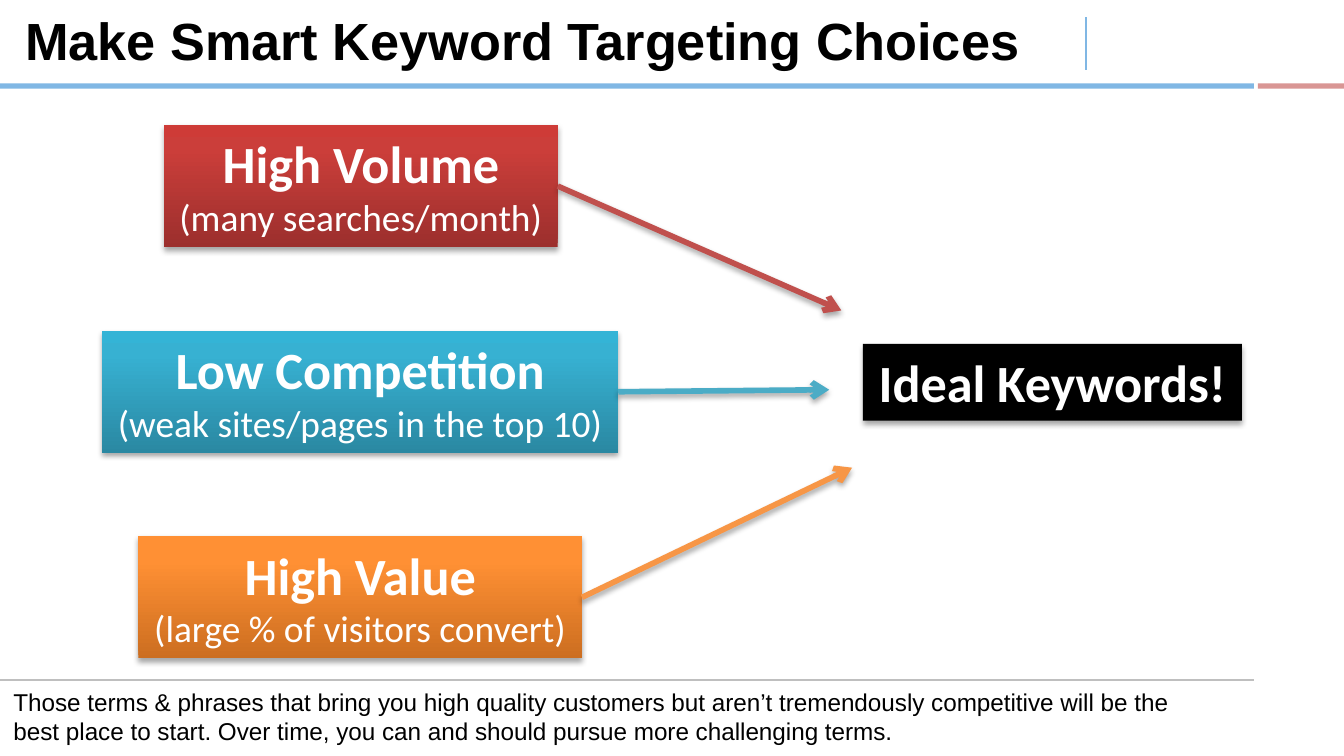
from pptx import Presentation
from pptx.dml.color import RGBColor
from pptx.enum.shapes import MSO_CONNECTOR, MSO_SHAPE
from pptx.enum.text import MSO_ANCHOR, MSO_AUTO_SIZE, PP_ALIGN
from pptx.oxml import parse_xml
from pptx.oxml.ns import nsdecls, qn
from pptx.util import Inches, Pt

COLORS = {
    "black": "000000", "white": "FFFFFF", "grey": "BFBFBF",
    "blue": "80B7E4", "pink": "D99694",
    "red": "C0504D", "teal": "4BACC6", "orange": "F79646",
}
# Gradient stops from bottom to top: (percent, colour)
GRADIENTS = {
    "red": [(0, "9C2F2D"), (80, "CB3E3A"), (100, "CE3B37")],
    "teal": [(0, "2A88A2"), (80, "37B1D2"), (100, "34B4D6")],
    "orange": [(0, "CC6E20"), (80, "FF9034"), (100, "FF9136")],
}
# Each factor: heading, detail, colour, left, width, arrow tip
FACTORS = [
    ("High Volume", "(many searches/month)", "red", 1.22, 2.93, (6.26, 2.31)),
    ("Low Competition", "(weak sites/pages in the top 10)", "teal", 0.76, 3.84, (6.17, 2.9)),
    ("High Value", "(large % of visitors convert)", "orange", 1.03, 3.3, (6.34, 3.48)),
]
FACTOR_TOP, FACTOR_STEP, FACTOR_HEIGHT = 0.93, 1.53, 0.91


def rgb(name):
    return RGBColor.from_string(COLORS[name])


def add_text(p, text, size=28, font="Calibri", color="white", bold=False,
             align=PP_ALIGN.CENTER):
    p.alignment = align
    p.space_before = Pt(0)
    r = p.add_run()
    r.text = text
    r.font.size, r.font.name, r.font.bold = Pt(size), font, bold
    r.font.color.rgb = rgb(color)


def place(sp, left, top, width, height):
    sp.left, sp.top = Inches(left), Inches(top)
    sp.width, sp.height = Inches(width), Inches(height)
    tf = sp.text_frame
    tf.word_wrap = True
    tf.auto_size = MSO_AUTO_SIZE.NONE
    tf.vertical_anchor = MSO_ANCHOR.MIDDLE
    return tf.paragraphs[0]


def add_shadow(sp):
    effects = sp._element.spPr.find(qn("a:effectLst"))
    effects.append(parse_xml(
        f'<a:outerShdw {nsdecls("a")} blurRad="{Pt(3.1)}" dist="{Pt(1.8)}" '
        'dir="5400000" rotWithShape="0"><a:srgbClr val="000000">'
        '<a:alpha val="35000"/></a:srgbClr></a:outerShdw>'))


def add_rect(s, left, top, width, height, color):
    sp = s.shapes.add_shape(MSO_SHAPE.RECTANGLE, Inches(left), Inches(top),
                            Inches(width), Inches(height))
    sp.shadow.inherit = False
    sp.line.fill.background()
    sp.fill.solid()
    sp.fill.fore_color.rgb = rgb(color)
    return sp


def set_gradient(sp, stops):
    sp.fill.gradient()
    sp.fill.gradient_angle = 90
    gs_list = sp._element.spPr.find(qn("a:gradFill")).find(qn("a:gsLst"))
    for gs in list(gs_list):
        gs_list.remove(gs)
    for percent, color in stops:
        gs_list.append(parse_xml(
            f'<a:gs {nsdecls("a")} pos="{percent * 1000}">'
            f'<a:srgbClr val="{color}"/></a:gs>'))


def add_box(s, left, top, width, height, color, heading, detail=None):
    sp = add_rect(s, left, top, width, height, color)
    add_shadow(sp)
    tf = sp.text_frame
    tf.word_wrap = False
    tf.auto_size = MSO_AUTO_SIZE.SHAPE_TO_FIT_TEXT
    tf.vertical_anchor = MSO_ANCHOR.TOP
    add_text(tf.paragraphs[0], heading, bold=True)
    if detail:
        add_text(tf.add_paragraph(), detail, size=20)
    return sp


def add_line(s, start, end, color, width=0.75):
    line = s.shapes.add_connector(MSO_CONNECTOR.STRAIGHT,
                                  *map(Inches, (*start, *end)))
    line.line.color.rgb = rgb(color)
    line.line.width = Pt(width)
    line._element.spPr.append(parse_xml(f'<a:effectLst {nsdecls("a")}/>'))
    return line


def add_arrow(s, box, tip, color):
    start = (box.left + box.width) / Inches(1), (box.top + box.height / 2) / Inches(1)
    arrow = add_line(s, start, tip, color, width=3)
    arrow.begin_connect(box, 3)
    arrow._element.spPr.find(qn("a:ln")).append(
        parse_xml(f'<a:tailEnd {nsdecls("a")} type="arrow"/>'))
    add_shadow(arrow)


def main():
    # 16:9 slide
    prs = Presentation()
    prs.slide_width = Inches(10)
    prs.slide_height = prs.slide_width * 9 // 16
    s = prs.slides.add_slide(prs.slide_layouts[1])
    title, body = s.placeholders

    # Title and closing remark
    p = place(title, 0, 0.01, 7.77, 0.57)
    add_text(p, "Make Smart Keyword Targeting Choices", font="Arial",
             color="black", bold=True)
    p = place(body, 0, 5.06, 9.08, 0.54)
    add_text(p, "Those terms & phrases that bring you high quality customers "
             "but aren’t tremendously competitive will be the best place to "
             "start. Over time, you can and should pursue more challenging "
             "terms.", size=13, font="Arial", color="black",
             align=PP_ALIGN.LEFT)
    pPr = p._p.get_or_add_pPr()
    pPr.set("marL", "0")
    pPr.set("indent", "0")
    pPr.append(parse_xml(f'<a:buNone {nsdecls("a")}/>'))

    # Header bars and thin rules
    add_rect(s, 0, 0.62, 9.33, 0.04, "blue")
    add_rect(s, 9.36, 0.62, 0.7, 0.04, "pink")
    add_line(s, (8.08, 0.13), (8.08, 0.52), "blue")
    add_line(s, (0, 5.06), (9.33, 5.06), "grey")

    # Three factors with arrows to the result
    for i, (heading, detail, color, left, width, tip) in enumerate(FACTORS):
        box = add_box(s, left, FACTOR_TOP + i * FACTOR_STEP, width,
                      FACTOR_HEIGHT, color, heading, detail)
        set_gradient(box, GRADIENTS[color])
        add_arrow(s, box, tip, color)
    add_box(s, 6.42, 2.56, 2.82, 0.57, "black", "Ideal Keywords!")

    prs.save("out.pptx")


if __name__ == "__main__":
    main()
